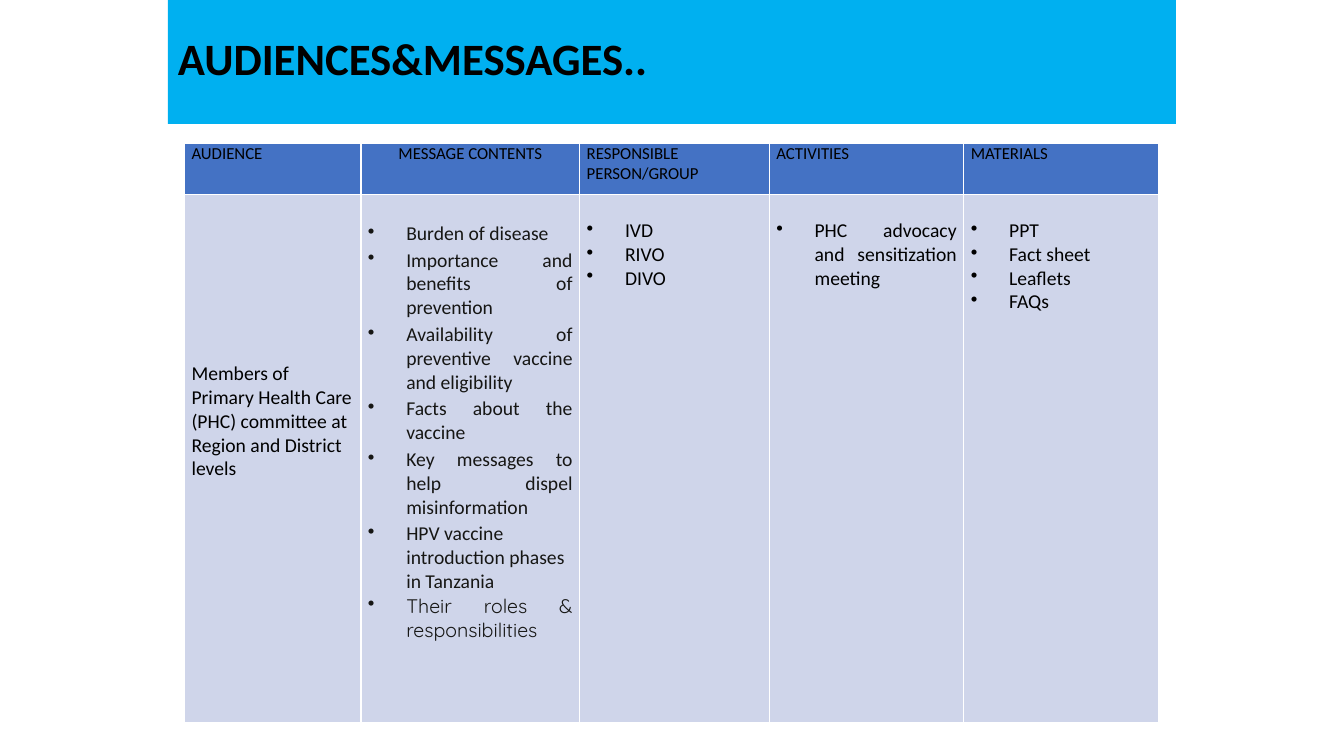
from dataclasses import dataclass

from lxml import etree
from pptx import Presentation
from pptx.dml.color import RGBColor
from pptx.enum.shapes import MSO_SHAPE
from pptx.enum.text import MSO_ANCHOR, PP_ALIGN
from pptx.oxml.ns import qn
from pptx.util import Inches, Pt

RECT = MSO_SHAPE.RECTANGLE
MIDDLE = MSO_ANCHOR.MIDDLE
LEFT, CENTER, JUSTIFY = PP_ALIGN.LEFT, PP_ALIGN.CENTER, PP_ALIGN.JUSTIFY

BLACK = RGBColor(0x00, 0x00, 0x00)
INK = RGBColor(0x16, 0x16, 0x14)
WHITE = RGBColor(0xFF, 0xFF, 0xFF)
CYAN = RGBColor(0x00, 0xB0, 0xF0)
BLUE = RGBColor(0x44, 0x72, 0xC4)
PALE = RGBColor(0xCF, 0xD5, 0xEA)

FONT = "Calibri"
WIDE, HIGH = Inches(13.33), Inches(7.5)
COLS = (1.75, 2.17, 1.88, 1.93, 1.93)
ROWS = (0.51, 5.24)
SIDE = Inches(0.07)
HANG = Inches(0.38)


@dataclass
class Line:
    text: str
    size: int = 14
    align: PP_ALIGN = JUSTIFY
    color: RGBColor = BLACK
    font: str = FONT
    bold: bool = False
    after: int = 0
    bullet: bool = False


@dataclass
class Column:
    head: Line
    body: list[Line]
    drop: float = 0.24  # inches from the top of the body cell to its text


def head(text: str, align: PP_ALIGN = JUSTIFY) -> Line:
    return Line(text, size=12, align=align)


def points(*texts: str, color: RGBColor = BLACK, after: int = 0) -> list[Line]:
    return [Line(text, color=color, after=after, bullet=True) for text in texts]


COLUMNS = (
    Column(
        head("AUDIENCE"),
        [Line("Members of Primary Health Care (PHC) committee at Region and "
              "District levels", align=LEFT)],
        drop=1.66,
    ),
    Column(
        head("MESSAGE CONTENTS", CENTER),
        points(
            "Burden of disease",
            "Importance and benefits of prevention",
            "Availability of preventive vaccine and eligibility",
            "Facts about the vaccine",
            "Key messages to help dispel misinformation",
            color=INK, after=2,
        ) + [
            Line("HPV vaccine introduction phases in Tanzania",
                 align=LEFT, color=INK, bullet=True),
            Line("Their roles & responsibilities",
                 color=INK, font="Quicksand", bullet=True),
        ],
        drop=0.27,
    ),
    Column(head("RESPONSIBLE PERSON/GROUP"), points("IVD", "RIVO", "DIVO")),
    Column(head("ACTIVITIES"), points("PHC advocacy and sensitization meeting")),
    Column(head("MATERIALS"), points("PPT", "Fact sheet", "Leaflets", "FAQs")),
)


def write(frame, lines: list[Line]) -> None:
    frame.word_wrap = True
    for i, line in enumerate(lines):
        para = frame.paragraphs[0] if i == 0 else frame.add_paragraph()
        para.text = line.text
        para.alignment = line.align
        para.space_after = Pt(line.after)
        font = para.runs[0].font
        font.name, font.size, font.bold = line.font, Pt(line.size), line.bold
        font.color.rgb = line.color
        if line.bullet:
            props = para._p.get_or_add_pPr()
            props.set("marL", str(HANG))
            props.set("indent", str(-HANG))
            etree.SubElement(props, qn("a:buChar"), char="•")


def edge(cell) -> None:
    """Give the cell a thin white line on all four sides."""
    props = cell._tc.get_or_add_tcPr()
    for i, side in enumerate(("lnL", "lnR", "lnT", "lnB")):
        line = etree.Element(qn(f"a:{side}"), w=str(Pt(1)))
        fill = etree.SubElement(line, qn("a:solidFill"))
        etree.SubElement(fill, qn("a:srgbClr"), val=str(WHITE))
        props.insert(i, line)


def fill_cell(cell, lines: list[Line], color: RGBColor, drop: float = 0) -> None:
    cell.margin_left = cell.margin_right = SIDE
    cell.margin_top, cell.margin_bottom = Inches(drop), 0
    cell.fill.solid()
    cell.fill.fore_color.rgb = color
    edge(cell)
    write(cell.text_frame, lines)


def add_title(slide) -> None:
    band = slide.shapes.add_shape(
        RECT, WIDE // 8, Inches(-0.02), WIDE * 3 // 4, HIGH // 6)
    band.shadow.inherit = False
    band.fill.solid()
    band.fill.fore_color.rgb = CYAN
    band.line.fill.background()
    band.text_frame.vertical_anchor = MIDDLE
    write(band.text_frame,
          [Line("AUDIENCES&MESSAGES..", size=32, align=LEFT, bold=True)])
    band.text_frame.paragraphs[0].line_spacing = 0.9


def add_grid(slide) -> None:
    table = slide.shapes.add_table(
        len(ROWS), len(COLS), Inches(1.83), Inches(1.42),
        Inches(sum(COLS)), Inches(sum(ROWS))).table
    table.first_row = table.horz_banding = False
    for row, height in zip(table.rows, ROWS):
        row.height = Inches(height)
    for i, (width, column) in enumerate(zip(COLS, COLUMNS)):
        table.columns[i].width = Inches(width)
        fill_cell(table.cell(0, i), [column.head], BLUE)
        fill_cell(table.cell(1, i), column.body, PALE, column.drop)


def main() -> None:
    deck = Presentation()
    deck.slide_width, deck.slide_height = WIDE, HIGH
    slide = deck.slides.add_slide(deck.slide_layouts[6])
    add_title(slide)
    add_grid(slide)
    deck.save("out.pptx")


if __name__ == "__main__":
    main()
